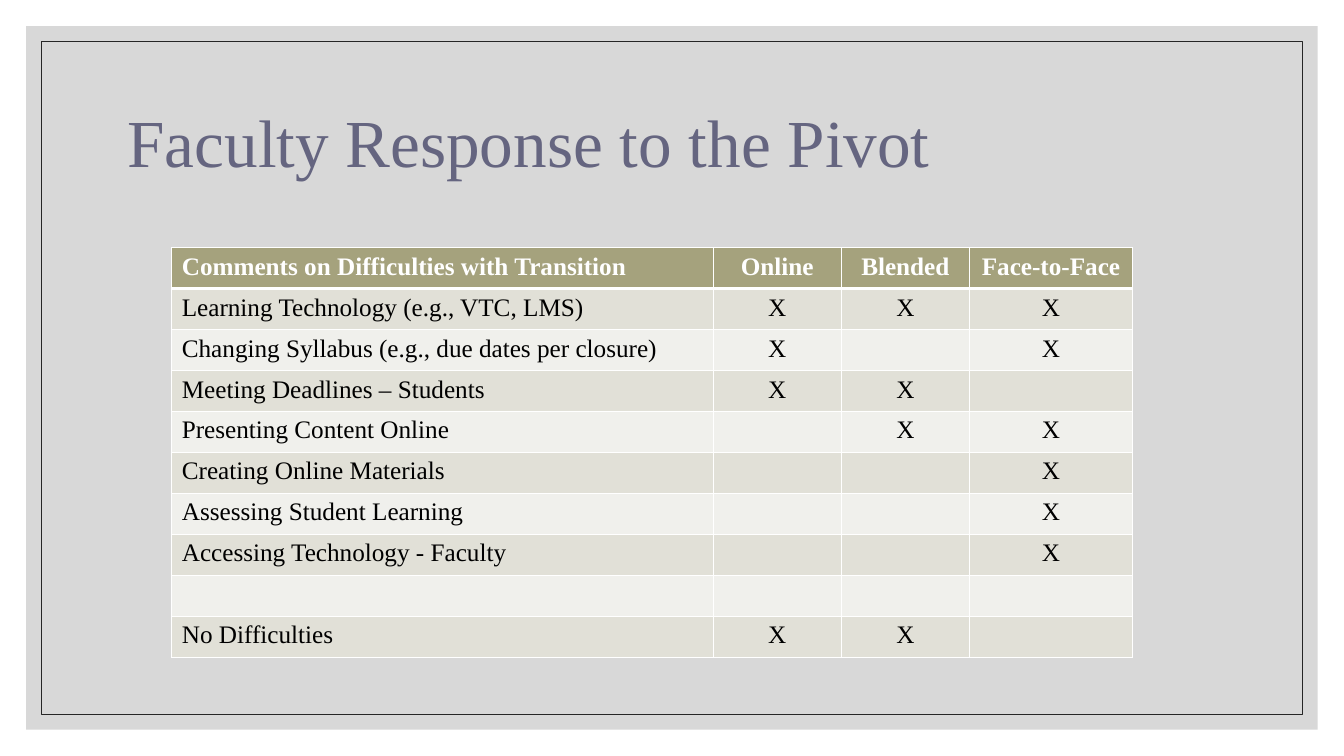
import dataclasses

import lxml.etree
import pptx
import pptx.dml.color
import pptx.enum.shapes
import pptx.enum.text
import pptx.oxml.ns
import pptx.util

ALIGN = pptx.enum.text.PP_ALIGN
ANCHOR = pptx.enum.text.MSO_ANCHOR
RECT = pptx.enum.shapes.MSO_SHAPE.RECTANGLE


@dataclasses.dataclass(frozen=True)
class Theme:
    """Colours, font and type sizes of the slide."""
    font: str = "Times New Roman"
    title_size: int = 48
    table_size: int = 18
    title: str = "656580"
    panel: str = "BFBFBF"
    panel_opacity: int = 60
    outline: str = "262626"
    header: str = "A5A27D"
    bands: tuple = ("E1E0D7", "F0F0EC")
    white: str = "FFFFFF"
    text: str = "000000"


@dataclasses.dataclass(frozen=True)
class Box:
    """A rectangle in EMU."""
    x: int
    y: int
    w: int
    h: int

    def share(self, x, y, w, h):
        """Return the area given in percent of the sides of the box."""
        return Box(int(self.x + self.w * x / 100), int(self.y + self.h * y / 100),
                   int(self.w * w / 100), int(self.h * h / 100))

    def inset(self, percent):
        """Return the box with an equal margin, in percent of its height."""
        m = int(self.h * percent / 100)
        return Box(self.x + m, self.y + m, self.w - 2 * m, self.h - 2 * m)

    def bounds(self):
        """Return left, top, width and height."""
        return self.x, self.y, self.w, self.h


THEME = Theme()
HEADINGS = ("Comments on Difficulties with Transition", "Online", "Blended", "Face-to-Face")
COMMENTS = (
    ("Learning Technology (e.g., VTC, LMS)", "X", "X", "X"),
    ("Changing Syllabus (e.g., due dates per closure)", "X", "", "X"),
    ("Meeting Deadlines – Students", "X", "X", ""),
    ("Presenting Content Online", "", "X", "X"),
    ("Creating Online Materials", "", "", "X"),
    ("Assessing Student Learning", "", "", "X"),
    ("Accessing Technology - Faculty", "", "", "X"),
    ("", "", "", ""),
    ("No Difficulties", "X", "X", ""),
)
COLUMN_SHARES = (56.35, 13.33, 13.33, 16.99)


def rgb(color):
    """Return a colour object for a hex string."""
    return pptx.dml.color.RGBColor.from_string(color)


def write(tf, text, *, size, color, bold=False, align=ALIGN.LEFT, spacing=1.0):
    """Write one formatted paragraph into a text frame."""
    p = tf.paragraphs[0]
    p.alignment = align
    p.line_spacing = spacing
    p.font.size = pptx.util.Pt(size)
    if text:
        r = p.add_run()
        r.text = text
        r.font.name = THEME.font
        r.font.size = pptx.util.Pt(size)
        r.font.bold = bold
        r.font.color.rgb = rgb(color)


def add_frame(s, box):
    """Draw the translucent panel and the thin outline inside it."""
    qn = pptx.oxml.ns.qn
    panel = s.shapes.add_shape(RECT, *box.inset(3.47).bounds())
    panel.shadow.inherit = False
    panel.fill.solid()
    panel.fill.fore_color.rgb = rgb(THEME.panel)
    panel.line.fill.background()
    clr = panel.element.spPr.find(qn("a:solidFill")).find(qn("a:srgbClr"))
    lxml.etree.SubElement(clr, qn("a:alpha"), val=str(THEME.panel_opacity * 1000))

    outline = s.shapes.add_shape(RECT, *box.inset(5.47).bounds())
    outline.shadow.inherit = False
    outline.fill.background()
    outline.line.color.rgb = rgb(THEME.outline)
    outline.line.width = pptx.util.Pt(0.5)


def add_title(s, box, text):
    """Place the slide title in the middle of the box height."""
    tf = s.shapes.add_textbox(*box.bounds()).text_frame
    tf.word_wrap = True
    tf.vertical_anchor = ANCHOR.MIDDLE
    write(tf, text, size=THEME.title_size, color=THEME.title, spacing=0.9)


def set_borders(cell, top, bottom):
    """Give a cell white borders, with top and bottom widths in points."""
    qn = pptx.oxml.ns.qn
    tc_pr = cell._tc.get_or_add_tcPr()
    for side, width in (("L", 1), ("R", 1), ("T", top), ("B", bottom)):
        ln = lxml.etree.SubElement(tc_pr, qn("a:ln" + side), w=str(pptx.util.Pt(width)))
        fill = lxml.etree.SubElement(ln, qn("a:solidFill"))
        lxml.etree.SubElement(fill, qn("a:srgbClr"), val=THEME.white)


def add_comment_table(s, box):
    """Fill the box with the banded table of comments."""
    rows = (HEADINGS,) + COMMENTS
    tbl = s.shapes.add_table(len(rows), len(HEADINGS), *box.bounds()).table
    for col, share in zip(tbl.columns, COLUMN_SHARES):
        col.width = int(box.w * share / 100)
    for i, row in enumerate(rows):
        tbl.rows[i].height = box.h // len(rows)
        head = i == 0
        for j, text in enumerate(row):
            cell = tbl.cell(i, j)
            set_borders(cell, top=3 if i == 1 else 1, bottom=3 if head else 1)
            cell.fill.solid()
            cell.fill.fore_color.rgb = rgb(THEME.header if head else THEME.bands[(i - 1) % 2])
            write(cell.text_frame, text, size=THEME.table_size, bold=head,
                  color=THEME.white if head else THEME.text,
                  align=ALIGN.CENTER if j else ALIGN.LEFT)


def build_slide(prs):
    """Add the slide on faculty response."""
    s = prs.slides.add_slide(prs.slide_layouts[6])
    page = Box(0, 0, prs.slide_width, prs.slide_height)
    add_frame(s, page)
    add_title(s, page.share(8.75, 9.33, 82.5, 20), "Faculty Response to the Pivot")
    add_comment_table(s, page.share(12.78, 32.75, 71.5, 54.2))


def main():
    """Build and save the presentation."""
    prs = pptx.Presentation()
    prs.slide_width = pptx.util.Inches(13.33)
    prs.slide_height = pptx.util.Inches(7.5)
    build_slide(prs)
    prs.save("out.pptx")


if __name__ == "__main__":
    main()
